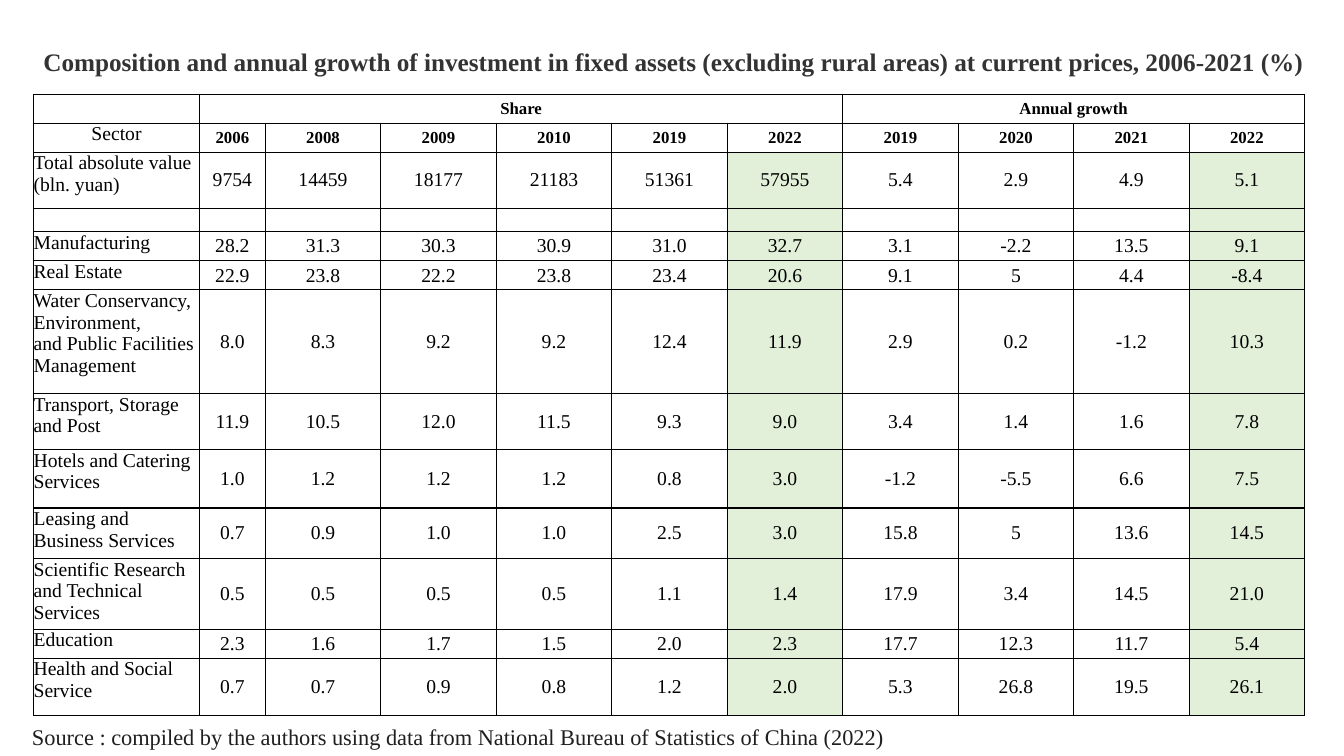
from lxml.etree import SubElement
from pptx import Presentation
from pptx.dml.color import RGBColor
from pptx.enum.text import MSO_ANCHOR as Anchor, MSO_AUTO_SIZE as AutoSize, PP_ALIGN as Align
from pptx.oxml import parse_xml
from pptx.oxml.ns import nsdecls, qn
from pptx.util import Pt

TITLE = ("Composition and annual growth of investment in fixed assets "
         "(excluding rural areas) at current prices, 2006-2021 (%)")
SOURCE = "Source : compiled by the authors using data from National Bureau of Statistics of China (2022)"
FONT = "Times New Roman"
COLORS = {"title": "333333", "source": "1F1F1F", "text": "000000",
          "border": "000000", "highlight": "E2F0D9"}

GROUPS = [("Share", 1, 6), ("Annual growth", 7, 10)]
HEADER = ("Sector", "2006 2008 2009 2010 2019 2022 2019 2020 2021 2022")
SECTORS = [
    ("Total absolute value (bln. yuan)", "9754 14459 18177 21183 51361 57955 5.4 2.9 4.9 5.1"),
    ("", ""),
    ("Manufacturing", "28.2 31.3 30.3 30.9 31.0 32.7 3.1 -2.2 13.5 9.1"),
    ("Real Estate", "22.9 23.8 22.2 23.8 23.4 20.6 9.1 5 4.4 -8.4"),
    ("Water Conservancy, Environment, \nand Public Facilities Management",
     "8.0 8.3 9.2 9.2 12.4 11.9 2.9 0.2 -1.2 10.3"),
    ("Transport, Storage and Post", "11.9 10.5 12.0 11.5 9.3 9.0 3.4 1.4 1.6 7.8"),
    ("Hotels and Catering Services", "1.0 1.2 1.2 1.2 0.8 3.0 -1.2 -5.5 6.6 7.5"),
    ("Leasing and Business Services", "0.7 0.9 1.0 1.0 2.5 3.0 15.8 5 13.6 14.5"),
    ("Scientific Research and Technical Services", "0.5 0.5 0.5 0.5 1.1 1.4 17.9 3.4 14.5 21.0"),
    ("Education", "2.3 1.6 1.7 1.5 2.0 2.3 17.7 12.3 11.7 5.4"),
    ("Health and Social Service", "0.7 0.7 0.9 0.8 1.2 2.0 5.3 26.8 19.5 26.1"),
]
HIGHLIGHT_COLUMNS = (6, 10)
HEADER_ROWS = 2
COLUMN_WIDTHS = [118.5, 47] + [82.5] * 9
ROW_HEIGHTS = [20.75, 20.75, 40, 16, 20.75, 20.75, 74.25, 40, 41.5, 36.25, 47.5, 20.75, 41]


def style_paragraph(para, size, color, bold=False, align=Align.LEFT):
    para.alignment = align
    para.font.name = FONT
    para.font.size = Pt(size)
    para.font.bold = bold
    para.font.color.rgb = RGBColor.from_string(color)


def add_borders(cell):
    properties = cell._tc.get_or_add_tcPr()
    for index, side in enumerate(("lnL", "lnR", "lnT", "lnB")):
        properties.insert(index, parse_xml(
            f'<a:{side} {nsdecls("a")} w="{Pt(1)}"><a:solidFill>'
            f'<a:srgbClr val="{COLORS["border"]}"/></a:solidFill></a:{side}>'))


def fill_cell(cell, text, row, column):
    is_header = row < HEADER_ROWS
    is_label = column == 0
    cell.margin_left = cell.margin_right = cell.margin_top = cell.margin_bottom = 0
    cell.vertical_anchor = Anchor.TOP if is_label else Anchor.MIDDLE
    para = cell.text_frame.paragraphs[0]
    para.text = text
    bold = is_header and not is_label
    size = 12 if bold else 14
    align = Align.CENTER if is_header or not is_label else Align.LEFT
    style_paragraph(para, size, COLORS["text"], bold, align)
    if not text:
        SubElement(para._p, qn("a:endParaRPr"), sz=str(size * 100))
    if column in HIGHLIGHT_COLUMNS and not is_header:
        cell.fill.solid()
        cell.fill.fore_color.rgb = RGBColor.from_string(COLORS["highlight"])
    else:
        cell.fill.background()
    add_borders(cell)


def add_investment_table(slide):
    group_row = [""] * len(COLUMN_WIDTHS)
    for name, first, last in GROUPS:
        group_row[first] = name
    rows = [group_row]
    for label, values in [HEADER] + SECTORS:
        rows.append([label] + (values.split() or [""] * (len(COLUMN_WIDTHS) - 1)))
    frame = slide.shapes.add_table(len(rows), len(COLUMN_WIDTHS), Pt(24), Pt(67.25),
                                   Pt(sum(COLUMN_WIDTHS)), Pt(sum(ROW_HEIGHTS)))
    table = frame.table
    table.first_row = table.horz_banding = False
    for column, width in zip(table.columns, COLUMN_WIDTHS):
        column.width = Pt(width)
    for row, height in zip(table.rows, ROW_HEIGHTS):
        row.height = Pt(height)
    for row, texts in enumerate(rows):
        for column, text in enumerate(texts):
            fill_cell(table.cell(row, column), text, row, column)
    for name, first, last in GROUPS:
        table.cell(0, first).merge(table.cell(0, last))


def main():
    deck = Presentation()
    deck.slide_width, deck.slide_height = Pt(960), Pt(540)
    slide = deck.slides.add_slide(deck.slide_layouts[5])
    add_investment_table(slide)

    title = slide.shapes.title
    title.left, title.top, title.width, title.height = Pt(23.75), Pt(29.5), Pt(924), Pt(29)
    title.text_frame.text = TITLE
    title.text_frame.word_wrap = False
    title.text_frame.auto_size = AutoSize.SHAPE_TO_FIT_TEXT
    title.text_frame.vertical_anchor = Anchor.MIDDLE
    style_paragraph(title.text_frame.paragraphs[0], 18, COLORS["title"], bold=True)

    source_box = slide.shapes.add_textbox(Pt(15.75), Pt(513.25), Pt(744.5), Pt(26.75))
    source_box.text_frame.word_wrap = True
    source_box.text_frame.auto_size = AutoSize.SHAPE_TO_FIT_TEXT
    source_box.text_frame.text = SOURCE
    style_paragraph(source_box.text_frame.paragraphs[0], 16, COLORS["source"])
    deck.save("out.pptx")


if __name__ == "__main__":
    main()
